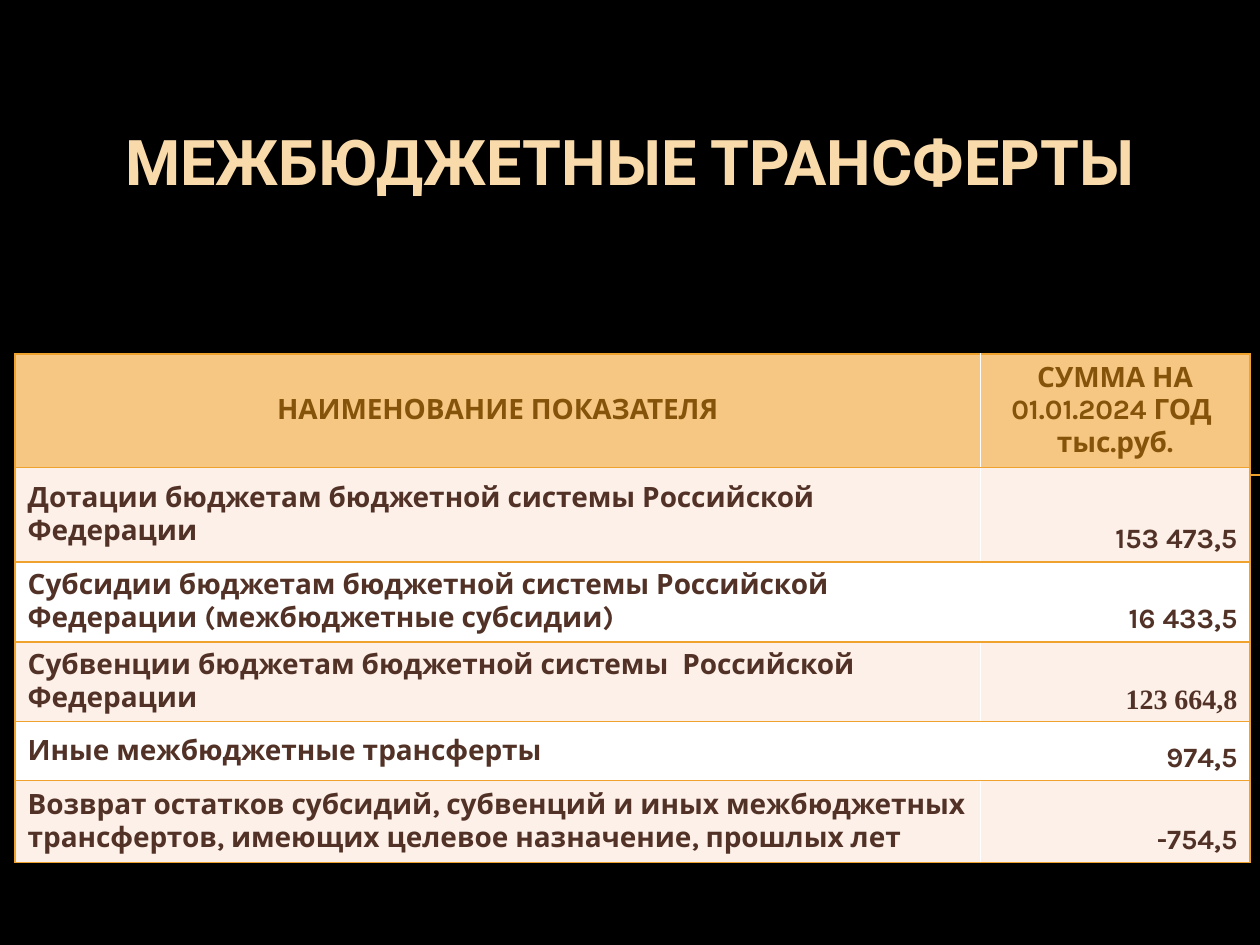
from dataclasses import dataclass

from lxml import etree
from pptx import Presentation
from pptx.dml.color import RGBColor
from pptx.enum.shapes import MSO_CONNECTOR
from pptx.enum.text import MSO_ANCHOR, PP_ALIGN
from pptx.oxml import parse_xml
from pptx.oxml.ns import nsdecls, qn
from pptx.util import Inches, Pt

STRAIGHT = MSO_CONNECTOR.STRAIGHT
TOP, MIDDLE, BOTTOM = MSO_ANCHOR.TOP, MSO_ANCHOR.MIDDLE, MSO_ANCHOR.BOTTOM
LEFT, CENTER, RIGHT = PP_ALIGN.LEFT, PP_ALIGN.CENTER, PP_ALIGN.RIGHT


@dataclass
class Theme:
    background: str = "000000"
    title: str = "F9DAAB"
    line: str = "F0A22E"
    header_fill: str = "F6C782"
    header_text: str = "85540A"
    body_text: str = "523227"
    bands: tuple = ("FCF0E8", "FFFFFF")
    title_font: str = "Roboto"
    table_font: str = "Karla"
    number_font: str = "Times New Roman"
    title_size: int = 36
    table_size: int = 16


def write(tf, text, font, size, color, align):
    tf.text = text
    for p in tf.paragraphs:
        p.alignment = align
        for r in p.runs:
            r.font.name = font
            r.font.size = Pt(size)
            r.font.bold = True
            r.font.color.rgb = RGBColor.from_string(color)


def set_borders(cell, sides, color):
    tc_pr = cell._tc.get_or_add_tcPr()
    for i, side in enumerate(sides):
        tc_pr.insert(i, parse_xml(
            f'<a:ln{side} {nsdecls("a")} w="{Pt(1)}"><a:solidFill>'
            f'<a:srgbClr val="{color}"/></a:solidFill></a:ln{side}>'))


theme = Theme()
rows = [
    ("НАИМЕНОВАНИЕ ПОКАЗАТЕЛЯ", "СУММА НА 01.01.2024 ГОД \nтыс.руб.", 0.65),
    ("Дотации бюджетам бюджетной системы Российской Федерации", "153 473,5", 0.75),
    ("Субсидии бюджетам бюджетной системы Российской Федерации (межбюджетные субсидии)",
     "16 433,5", 0.63),
    ("Субвенции бюджетам бюджетной системы  Российской Федерации", "123 664,8", 0.63),
    ("Иные межбюджетные трансферты", "974,5", 0.47),
    ("Возврат остатков субсидий, субвенций и иных межбюджетных трансфертов, "
     "имеющих целевое назначение, прошлых лет", "-754,5", 0.65),
]
subventions_row = 3

prs = Presentation()
prs.slide_width, prs.slide_height = Inches(10), Inches(7.5)
s = prs.slides.add_slide(prs.slide_layouts[6])
s.background.fill.solid()
s.background.fill.fore_color.rgb = RGBColor.from_string(theme.background)

rule = s.shapes.add_connector(STRAIGHT, Inches(0.56), Inches(3.77), Inches(10), Inches(3.77))
rule.line.color.rgb = RGBColor.from_string(theme.line)
rule.line.width = Pt(0.75)
etree.SubElement(rule._element.spPr, qn("a:effectLst"))

title = s.shapes.add_textbox(Inches(0), Inches(0.92), Inches(10), Inches(1.97))
tf = title.text_frame
tf.word_wrap = True
tf.vertical_anchor = TOP
write(tf, "МЕЖБЮДЖЕТНЫЕ ТРАНСФЕРТЫ", theme.title_font, theme.title_size, theme.title, CENTER)

height = sum(row[2] for row in rows)
table = s.shapes.add_table(len(rows), 2, Inches(0.12), Inches(2.81),
                           Inches(9.8), Inches(height)).table
for column, width in zip(table.columns, (7.66, 2.14)):
    column.width = Inches(width)

for i, (name, amount, row_height) in enumerate(rows):
    table.rows[i].height = Inches(row_height)
    header = i == 0
    fill = theme.header_fill if header else theme.bands[(i - 1) % 2]
    color = theme.header_text if header else theme.body_text
    amount_font = theme.number_font if i == subventions_row else theme.table_font
    columns = [
        (name, theme.table_font, LEFT, MIDDLE, "LTB"),
        (amount, amount_font, RIGHT, BOTTOM, "RTB"),
    ]
    for j, (text, font, align, anchor, sides) in enumerate(columns):
        cell = table.cell(i, j)
        cell.fill.solid()
        cell.fill.fore_color.rgb = RGBColor.from_string(fill)
        cell.vertical_anchor = MIDDLE if header else anchor
        write(cell.text_frame, text, font, theme.table_size, color, CENTER if header else align)
        set_borders(cell, sides, theme.line)

prs.save("out.pptx")
